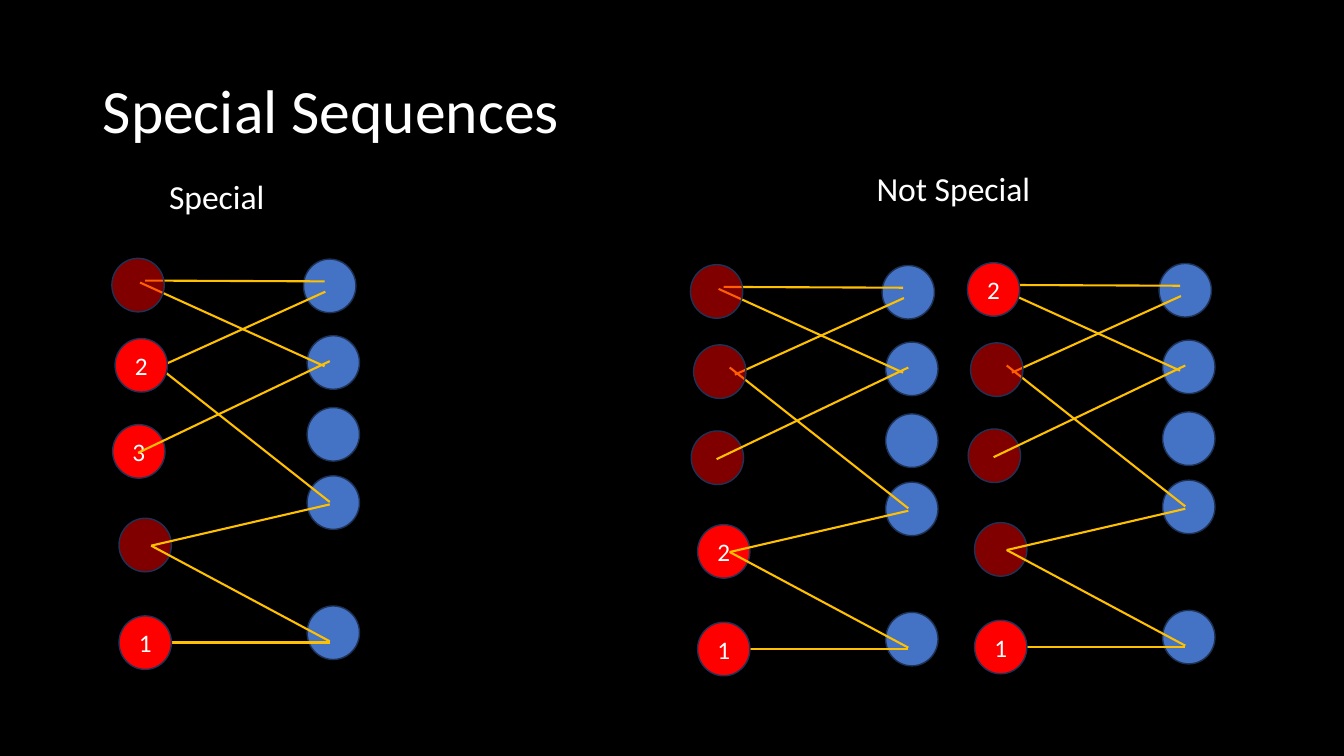
from dataclasses import dataclass

from lxml import etree
from pptx import Presentation
from pptx.dml.color import RGBColor
from pptx.enum.shapes import MSO_CONNECTOR, MSO_SHAPE
from pptx.enum.text import MSO_ANCHOR, PP_ALIGN
from pptx.oxml.ns import qn
from pptx.slide import Slide
from pptx.text.text import TextFrame
from pptx.util import Cm, Pt

OVAL = MSO_SHAPE.OVAL
STRAIGHT = MSO_CONNECTOR.STRAIGHT
MIDDLE, TOP = MSO_ANCHOR.MIDDLE, MSO_ANCHOR.TOP
LEFT, CENTER = PP_ALIGN.LEFT, PP_ALIGN.CENTER

BLACK = RGBColor(0x00, 0x00, 0x00)
WHITE = RGBColor(0xFF, 0xFF, 0xFF)
RED = RGBColor(0xFF, 0x00, 0x00)
BLUE = RGBColor(0x44, 0x72, 0xC4)
NAVY = RGBColor(0x1E, 0x32, 0x56)
GOLD = RGBColor(0xFF, 0xC0, 0x00)

FONT = "Calibri"
NODE_WIDTH, NODE_HEIGHT = 1.32, 1.35


@dataclass(frozen=True)
class Node:
    name: str
    left: float
    top: float


@dataclass(frozen=True)
class Edge:
    start: tuple[float, float]
    end: tuple[float, float]


@dataclass(frozen=True)
class Graph:
    left: float
    top: float
    labels: dict[str, str]


@dataclass(frozen=True)
class Caption:
    text: str
    left: float
    top: float
    width: float
    height: float
    size: float = 24
    anchor: MSO_ANCHOR = TOP
    line_spacing: float = 1.0


# Parts of one graph in cm from its top left corner, back to front.
# Red nodes are R1 to R5, blue nodes B1 to B5, both from the top down.
GRAPH_PARTS = [
    Node("B2", 4.92, 1.95),
    Node("B3", 4.92, 3.76),
    Node("B4", 4.92, 5.48),
    Node("B5", 4.92, 8.76),
    Edge((0.99, 2.59), (5.49, 6.14)),
    Edge((0.99, 9.68), (5.49, 9.68)),
    Node("R4", 0.18, 6.55),
    Edge((0.99, 7.24), (5.49, 9.65)),
    Edge((0.99, 7.24), (5.49, 6.2)),
    Node("B1", 4.83, 0.02),
    Node("R3", 0.02, 4.19),
    Edge((1.12, 2.77), (5.38, 0.84)),
    Edge((0.84, 0.56), (5.36, 0.58)),
    Edge((0.71, 0.61), (5.36, 2.72)),
    Edge((0.66, 4.9), (5.49, 2.59)),
    Node("R5", 0.18, 9.01),
    Node("R2", 0.08, 2.02),
    Node("R1", 0, 0),
]

GRAPHS = [
    Graph(24.38, 6.62, {"R1": "2", "R5": "1"}),
    Graph(17.4, 6.67, {"R4": "2", "R5": "1"}),
    Graph(2.82, 6.51, {"R2": "2", "R3": "3", "R5": "1"}),
]

CAPTIONS = [
    Caption("Special Sequences", 2.34, 1.02, 29.21, 3.68, 44, MIDDLE, 0.9),
    Caption("Special", 4.01, 4.32, 4.11, 1.27),
    Caption("Not Special", 21.84, 4.11, 4.52, 1.27),
]


def write_text(frame: TextFrame, text: str, *, size: float,
               align: PP_ALIGN = LEFT, anchor: MSO_ANCHOR = TOP,
               line_spacing: float = 1.0) -> None:
    frame.word_wrap = True
    frame.vertical_anchor = anchor
    paragraph = frame.paragraphs[0]
    paragraph.alignment = align
    paragraph.line_spacing = line_spacing
    run = paragraph.add_run()
    run.text = text
    run.font.name = FONT
    run.font.size = Pt(size)
    run.font.color.rgb = WHITE


def add_caption(slide: Slide, caption: Caption) -> None:
    box = slide.shapes.add_textbox(Cm(caption.left), Cm(caption.top),
                                   Cm(caption.width), Cm(caption.height))
    write_text(box.text_frame, caption.text, size=caption.size,
               anchor=caption.anchor, line_spacing=caption.line_spacing)


def add_node(slide: Slide, graph: Graph, node: Node) -> None:
    """Draw a node; a red one without a label is half transparent."""
    shape = slide.shapes.add_shape(
        OVAL, Cm(graph.left + node.left), Cm(graph.top + node.top),
        Cm(NODE_WIDTH), Cm(NODE_HEIGHT))
    shape.shadow.inherit = False
    is_red = node.name.startswith("R")
    shape.fill.solid()
    shape.fill.fore_color.rgb = RED if is_red else BLUE
    shape.line.color.rgb = NAVY
    shape.line.width = Pt(1)
    label = graph.labels.get(node.name)
    if label:
        write_text(shape.text_frame, label, size=18, align=CENTER, anchor=MIDDLE)
    elif is_red:
        color = shape.element.spPr.find(f"{qn('a:solidFill')}/{qn('a:srgbClr')}")
        etree.SubElement(color, qn("a:alpha"), val="50000")


def add_edge(slide: Slide, graph: Graph, edge: Edge) -> None:
    (start_x, start_y), (end_x, end_y) = edge.start, edge.end
    connector = slide.shapes.add_connector(
        STRAIGHT, Cm(graph.left + start_x), Cm(graph.top + start_y),
        Cm(graph.left + end_x), Cm(graph.top + end_y))
    connector.line.color.rgb = GOLD
    connector.line.width = Pt(1.5)
    etree.SubElement(connector.element.spPr, qn("a:effectLst"))


def add_graph(slide: Slide, graph: Graph) -> None:
    for part in GRAPH_PARTS:
        if isinstance(part, Node):
            add_node(slide, graph, part)
        else:
            add_edge(slide, graph, part)


def main() -> None:
    presentation = Presentation()
    presentation.slide_width = Cm(33.87)
    presentation.slide_height = Cm(19.05)
    slide = presentation.slides.add_slide(presentation.slide_layouts[6])
    slide.background.fill.solid()
    slide.background.fill.fore_color.rgb = BLACK
    for graph in GRAPHS:
        add_graph(slide, graph)
    for caption in CAPTIONS:
        add_caption(slide, caption)
    presentation.save("out.pptx")


if __name__ == "__main__":
    main()
